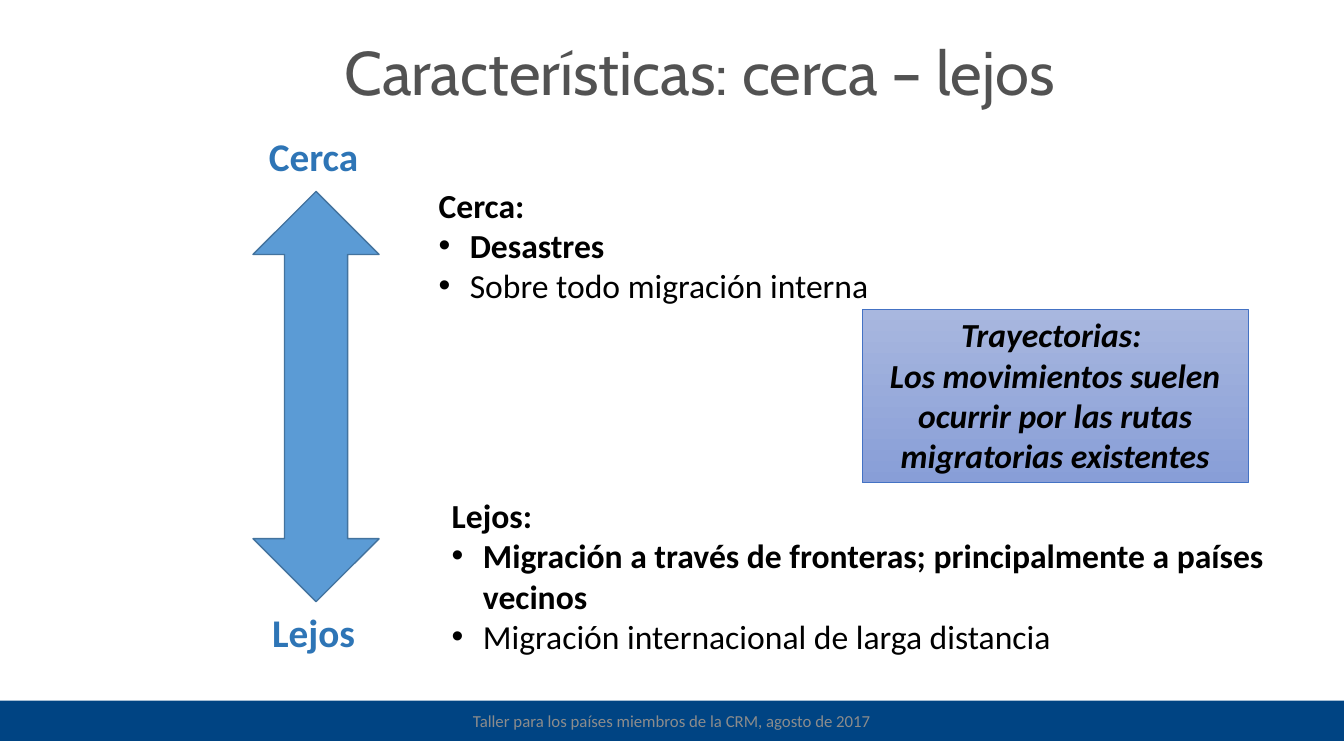
import pptx
import pptx.util
import pptx.dml.color
import pptx.enum.shapes
import pptx.enum.text
import pptx.oxml.ns
from lxml import etree

RGB = pptx.dml.color.RGBColor
Pt = pptx.util.Pt
Inches = pptx.util.Inches
SHAPE = pptx.enum.shapes.MSO_SHAPE
ALIGN = pptx.enum.text.PP_ALIGN
ANCHOR = pptx.enum.text.MSO_ANCHOR
FIT = pptx.enum.text.MSO_AUTO_SIZE

BLACK = RGB(0x00, 0x00, 0x00)
GREY = RGB(0x52, 0x52, 0x52)
PALE = RGB(0x8C, 0x8C, 0x8C)
NAVY = RGB(0x00, 0x44, 0x83)
SKY = RGB(0x5B, 0x9B, 0xD5)
STEEL = RGB(0x43, 0x73, 0x9E)
BLUE = RGB(0x2E, 0x75, 0xB6)
EDGE = RGB(0x44, 0x72, 0xC4)
FADE = (RGB(0xA8, 0xB7, 0xDF), RGB(0x88, 0x9E, 0xD7))

WIDE, HIGH = Inches(13.33), Inches(7.5)

TITLE = {"name": "Cabin", "size": Pt(44), "bold": False}
LABEL = {"name": "Calibri", "size": Pt(28), "bold": True}
BODY = {"name": "Calibri", "size": Pt(24), "bold": False}
STRONG = BODY | {"bold": True}
NOTE = STRONG | {"italic": True}
FOOT = {"name": "Calibri", "size": Pt(12), "bold": False}

CENTRE = {"alignment": ALIGN.CENTER}
TIGHT = CENTRE | {"line_spacing": 0.9}
FLUSH = {"alignment": ALIGN.LEFT, "space_before": Pt(0)}
MIDDLE = {"word_wrap": True, "auto_size": FIT.NONE, "vertical_anchor": ANCHOR.MIDDLE}
TOP = MIDDLE | {"vertical_anchor": ANCHOR.TOP}
INSET = {"margin_left": 0, "margin_right": 0,
         "margin_top": Inches(0.09), "margin_bottom": Inches(0.1)}


def apply(item, form):
    for key, value in form.items():
        setattr(item, key, value)


def frame(left, top, width, height):
    """Turn percentages of the slide's size into lengths."""
    return (int(WIDE * left / 100), int(HIGH * top / 100),
            int(WIDE * width / 100), int(HIGH * height / 100))


def place(item, area):
    apply(item, dict(zip(("left", "top", "width", "height"), frame(*area))))


def write(para, text, font, color, form):
    para.text = text
    apply(para, form)
    apply(para.font, font)
    para.font.color.rgb = color


def bullet(para, mark):
    """Give a hanging bullet, or none if mark is empty."""
    props = para._p.get_or_add_pPr()
    hang = Inches(0.31) if mark else 0
    props.set("marL", str(hang))
    props.set("indent", str(-hang))
    tag = etree.SubElement(props, pptx.oxml.ns.qn("a:buChar" if mark else "a:buNone"))
    if mark:
        tag.set("char", mark)


def add_title(slide, text, area):
    title = slide.shapes.title
    place(title, area)
    apply(title.text_frame, MIDDLE)
    write(title.text_frame.paragraphs[0], text, TITLE, GREY, TIGHT)


def add_list(holder, area, head, strong, plain):
    place(holder, area)
    body = holder.text_frame
    apply(body, TOP)
    rows = ((head, STRONG, ""), (strong, STRONG, "•"), (plain, BODY, "•"))
    for index, (text, font, mark) in enumerate(rows):
        para = body.add_paragraph() if index else body.paragraphs[0]
        write(para, text, font, BLACK, FLUSH)
        bullet(para, mark)


def add_label(slide, text, area):
    box = slide.shapes.add_textbox(*frame(*area))
    apply(box.text_frame, MIDDLE | INSET)
    write(box.text_frame.paragraphs[0], text, LABEL, BLUE, TIGHT)


def add_block(slide, kind, area, fills, line=None, width=0):
    """Draw a shape with one fill colour, or two for a downward fade."""
    block = slide.shapes.add_shape(kind, *frame(*area))
    block.shadow.inherit = False
    if len(fills) == 1:
        block.fill.solid()
        block.fill.fore_color.rgb = fills[0]
    else:
        block.fill.gradient()
        block.fill.gradient_angle = 270
        for stop, color in zip(block.fill.gradient_stops, fills):
            stop.color.rgb = color
    if line is None:
        block.line.fill.background()
    else:
        block.line.color.rgb = line
        block.line.width = Pt(width)
    return block


def fill_text(block, text, font, color, form):
    apply(block.text_frame, form)
    write(block.text_frame.paragraphs[0], text, font, color, CENTRE)


def main():
    deck = pptx.Presentation()
    deck.slide_width, deck.slide_height = WIDE, HIGH
    slide = deck.slides.add_slide(deck.slide_layouts.get_by_name("Two Content"))
    near, far = list(slide.placeholders)[1:]

    add_title(slide, "Características: cerca – lejos", (24.46, 5.33, 55.21, 9.2))
    add_list(near, (31.88, 23.73, 53.11, 17.47), "Cerca:",
             "Desastres", "Sobre todo migración interna")
    add_list(far, (32.86, 64.8, 62.64, 27.33), "Lejos:",
             "Migración a través de fronteras; principalmente a países vecinos",
             "Migración internacional de larga distancia")

    add_block(slide, SHAPE.UP_DOWN_ARROW, (18.83, 25.33, 9.38, 54.27), (SKY,), STEEL, 1)
    add_label(slide, "Cerca", (17.03, 16.4, 12.6, 9.2))
    add_label(slide, "Lejos", (16.58, 79.47, 13.5, 9.2))

    paths = add_block(slide, SHAPE.RECTANGLE, (64.14, 40.93, 28.73, 22.93), FADE, EDGE, 0.5)
    fill_text(paths, "Trayectorias: \vLos movimientos suelen ocurrir por las rutas "
              "migratorias existentes", NOTE, BLACK, TOP)
    foot = add_block(slide, SHAPE.RECTANGLE, (0, 92.67, 100, 5.33), (NAVY,))
    fill_text(foot, "Taller para los países miembros de la CRM, agosto de 2017",
              FOOT, PALE, MIDDLE)

    deck.save("out.pptx")


if __name__ == "__main__":
    main()
